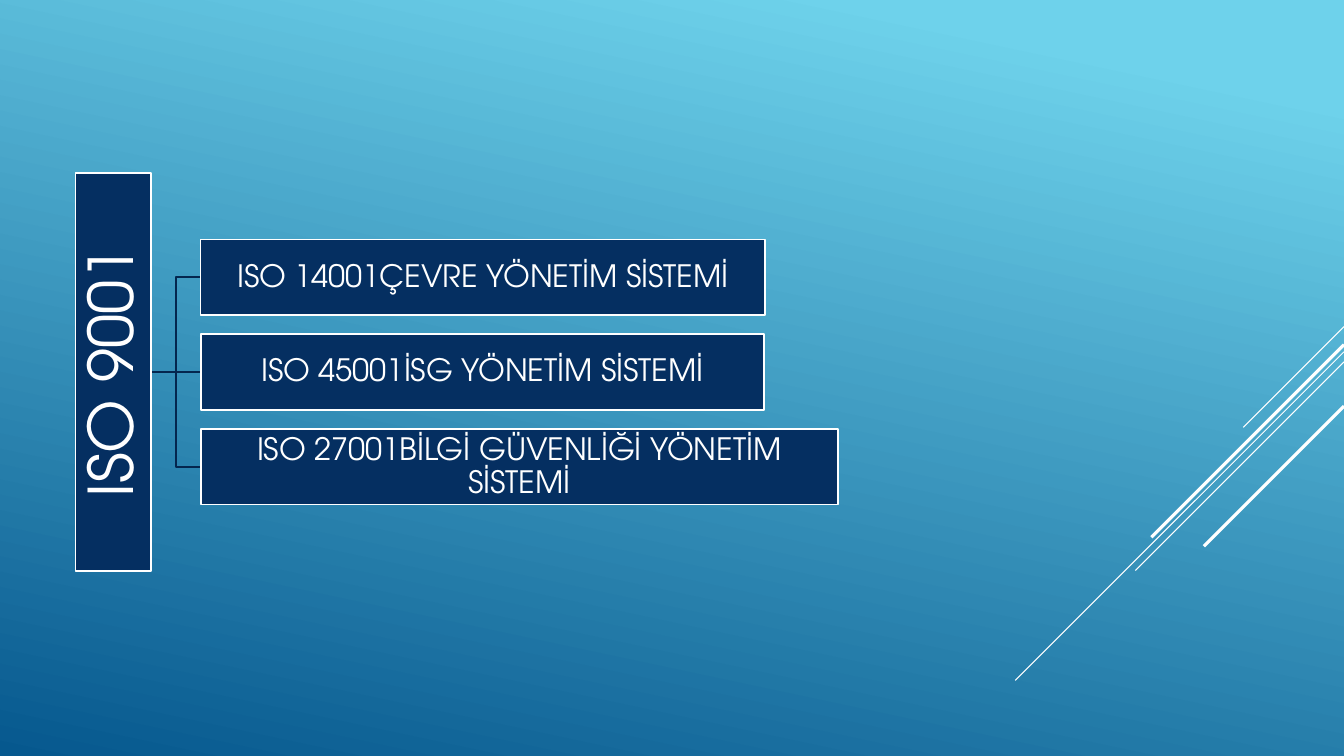
from pptx import Presentation
from pptx.dml.color import RGBColor
from pptx.enum.shapes import MSO_CONNECTOR as Connector, MSO_SHAPE as Shape
from pptx.enum.text import MSO_ANCHOR as Anchor, PP_ALIGN as Align
from pptx.oxml.ns import qn
from pptx.util import Inches, Pt
from lxml import etree

WHITE = RGBColor(0xFF, 0xFF, 0xFF)
NAVY = RGBColor(0x05, 0x2F, 0x61)
DARK_NAVY = RGBColor(0x04, 0x26, 0x4E)
SKY = RGBColor(0x6E, 0xD2, 0xEB)
OCEAN = RGBColor(0x06, 0x58, 0x8E)
FONT = "TeX Gyre Adventor"

WIDTH, HEIGHT = 13.33, 7.5
BOX_HEIGHT, BOX_STEP = 0.75, 0.94
ROOT_RIGHT, BRANCH_LEFT, CENTER_Y = 1.5, 1.99, 3.69
ROOT_LENGTH = 3.95

# Top end on the right edge, run at 45 degrees, line width
STREAKS = [(3.24, 1, 0.75), (3.49, 3.26, 0.75), (3.59, 2.07, 0.75),
           (3.42, 1.91, 2.25), (4.03, 1.39, 2.25)]
BRANCHES = [("ISO 14001ÇEVRE YÖNETİM SİSTEMİ", 5.6),
            ("ISO 45001İSG YÖNETİM SİSTEMİ", 5.59),
            ("ISO 27001BİLGİ GÜVENLİĞİ YÖNETİM SİSTEMİ", 6.32)]


def paint_background(page):
    fill = page.background.fill
    fill.gradient()
    fill.gradient_angle = 258
    for stop, position, color in zip(fill.gradient_stops, (0.1, 1), (SKY, OCEAN)):
        stop.position = position
        stop.color.rgb = color


def add_line(page, start, end, color, width):
    line = page.shapes.add_connector(Connector.STRAIGHT, *map(Inches, start + end))
    line.line.color.rgb = color
    line.line.width = Pt(width)
    etree.SubElement(line._element.spPr, qn("a:effectLst"))


def add_elbow(page, end_y):
    middle = (ROOT_RIGHT + BRANCH_LEFT) / 2
    points = [(middle, CENTER_Y), (middle, end_y), (BRANCH_LEFT, end_y)]
    builder = page.shapes.build_freeform(Inches(ROOT_RIGHT), Inches(CENTER_Y))
    builder.add_line_segments([(Inches(x), Inches(y)) for x, y in points], close=False)
    elbow = builder.convert_to_shape()
    elbow.shadow.inherit = False
    elbow.fill.background()
    elbow.line.color.rgb = DARK_NAVY
    elbow.line.width = Pt(1.25)


def add_box(page, text, left, center_y, width, size=22, inset=0.02, rotation=0):
    box = page.shapes.add_shape(
        Shape.RECTANGLE, Inches(left), Inches(center_y - BOX_HEIGHT / 2),
        Inches(width), Inches(BOX_HEIGHT))
    box.rotation = rotation
    box.shadow.inherit = False
    box.fill.solid()
    box.fill.fore_color.rgb = NAVY
    box.line.color.rgb = WHITE
    box.line.width = Pt(1.25)
    frame = box.text_frame
    frame.word_wrap = True
    frame.vertical_anchor = Anchor.MIDDLE
    frame.margin_left = frame.margin_right = Inches(inset)
    frame.margin_top = frame.margin_bottom = Inches(inset)
    para = frame.paragraphs[0]
    para.alignment = Align.CENTER
    para.line_spacing = 0.9
    span = para.add_run()
    span.text = text
    span.font.name = FONT
    span.font.size = Pt(size)
    span.font.color.rgb = WHITE


def main():
    deck = Presentation()
    deck.slide_width, deck.slide_height = Inches(WIDTH), Inches(HEIGHT)
    page = deck.slides.add_slide(deck.slide_layouts[6])
    paint_background(page)

    # Diagonal streaks at the right edge
    for top, run, width in STREAKS:
        add_line(page, (WIDTH, top), (WIDTH - run, top + run), WHITE, width)

    # Links from the root to its branches
    add_elbow(page, CENTER_Y + BOX_STEP)
    add_line(page, (ROOT_RIGHT, CENTER_Y), (BRANCH_LEFT, CENTER_Y), DARK_NAVY, 1.25)
    add_elbow(page, CENTER_Y - BOX_STEP)

    # Upright root box, then the branch boxes
    root_left = ROOT_RIGHT - BOX_HEIGHT / 2 - ROOT_LENGTH / 2
    add_box(page, "ISO 9001", root_left, CENTER_Y, ROOT_LENGTH,
            size=44, inset=0.03, rotation=270)
    for index, (text, width) in enumerate(BRANCHES):
        add_box(page, text, BRANCH_LEFT, CENTER_Y + (index - 1) * BOX_STEP, width)

    deck.save("out.pptx")


if __name__ == "__main__":
    main()
